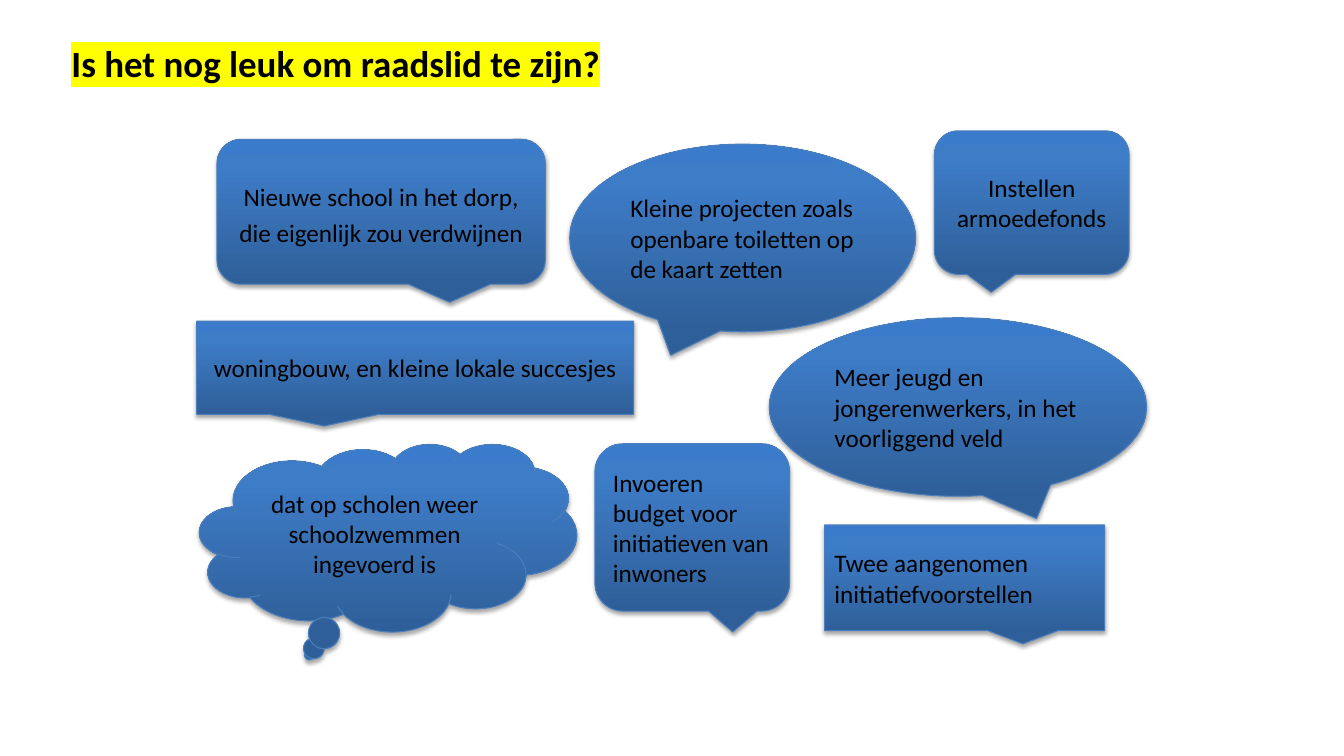
from copy import deepcopy
from lxml import etree
from pptx import Presentation
from pptx.dml.color import RGBColor
from pptx.enum import shapes, text
from pptx.oxml import ns
from pptx.util import Pt

KIND = shapes.MSO_SHAPE
LEFT, CENTER = text.PP_ALIGN.LEFT, text.PP_ALIGN.CENTER
GRADIENT = [(0, "2F5F99"), (0.8, "3D7CC7"), (1, "3A7CCB")]


def rgb(value):
    return RGBColor.from_string(value)


def add_element(parent, tag, **attributes):
    return etree.SubElement(parent, ns.qn(tag), attributes)


prs = Presentation()
prs.slide_width, prs.slide_height = Pt(960), Pt(540)
s = prs.slides.add_slide(prs.slide_layouts[5])

title = s.shapes.title
title.left, title.top, title.width, title.height = Pt(24), Pt(14.5), Pt(432), Pt(60)
tf = title.text_frame
tf.auto_size = text.MSO_AUTO_SIZE.NONE
tf.vertical_anchor = text.MSO_ANCHOR.MIDDLE
p = tf.paragraphs[0]
p.alignment = CENTER
r = p.add_run()
r.text = "Is het nog leuk om raadslid te zijn?"
r.font.size, r.font.bold = Pt(26.4), True
r.font.color.rgb = rgb("000000")
highlight = add_element(r.font._element, "a:highlight")
add_element(highlight, "a:srgbClr", val="FFFF00")
r.font.name = "Calibri"

# kind, left, top, width, height, mirrored, alignment, line spacing, wording
callouts = [
    (KIND.ROUNDED_RECTANGULAR_CALLOUT, 155, 99.5, 234.5, 103.5, True, CENTER, 1.2,
     "Nieuwe school in het dorp, die eigenlijk zou verdwijnen"),
    (KIND.OVAL_CALLOUT, 407, 103, 247, 134, False, LEFT, 1,
     "Kleine projecten zoals openbare toiletten op de kaart zetten"),
    (KIND.ROUNDED_RECTANGULAR_CALLOUT, 667.5, 93.5, 139, 102.5, False, CENTER, 1,
     "Instellen armoedefonds"),
    (KIND.OVAL_CALLOUT, 549.5, 227, 269.5, 127.5, True, LEFT, 1,
     "Meer jeugd en jongerenwerkers, in het voorliggend veld"),
    (KIND.CLOUD_CALLOUT, 142.5, 317, 269.5, 134, False, CENTER, 1,
     "dat op scholen weer schoolzwemmen ingevoerd is"),
    (KIND.RECTANGULAR_CALLOUT, 589, 375, 200, 75.5, True, LEFT, 1,
     "Twee aangenomen initiatiefvoorstellen"),
    (KIND.ROUNDED_RECTANGULAR_CALLOUT, 425, 317, 139, 119.5, True, LEFT, 1,
     "Invoeren budget voor initiatieven van inwoners"),
    (KIND.RECTANGULAR_CALLOUT, 140.5, 229.5, 312, 66.5, False, CENTER, 1,
     "woningbouw, en kleine lokale succesjes"),
]

for kind, left, top, width, height, mirrored, alignment, spacing, wording in callouts:
    sp = s.shapes.add_shape(kind, Pt(left), Pt(top), Pt(width), Pt(height))
    props = sp._element.spPr
    if mirrored:
        props.find(ns.qn("a:xfrm")).set("flipH", "1")

    sp.fill.gradient()
    sp.fill.gradient_angle = 90
    stops = props.find(ns.qn("a:gradFill")).find(ns.qn("a:gsLst"))
    stops.append(deepcopy(stops[-1]))
    for stop, (position, color) in zip(sp.fill.gradient_stops, GRADIENT):
        stop.position = position
        stop.color.rgb = rgb(color)
    sp.line.color.rgb = rgb("4B7EBC")
    sp.line.width = Pt(0.75)

    sp.shadow.inherit = False
    shadow = add_element(props.find(ns.qn("a:effectLst")), "a:outerShdw",
                         blurRad=str(Pt(3.1)), dist=str(Pt(1.8)),
                         dir="5400000", rotWithShape="0")
    shade = add_element(shadow, "a:srgbClr", val="000000")
    add_element(shade, "a:alpha", val="35000")

    tf = sp.text_frame
    tf.word_wrap = True
    tf.vertical_anchor = text.MSO_ANCHOR.MIDDLE
    p = tf.paragraphs[0]
    p.text = wording
    p.alignment, p.line_spacing = alignment, float(spacing)
    p.font.name, p.font.size = "Calibri", Pt(18)
    p.font.color.rgb = rgb("000000")

prs.save("out.pptx")
